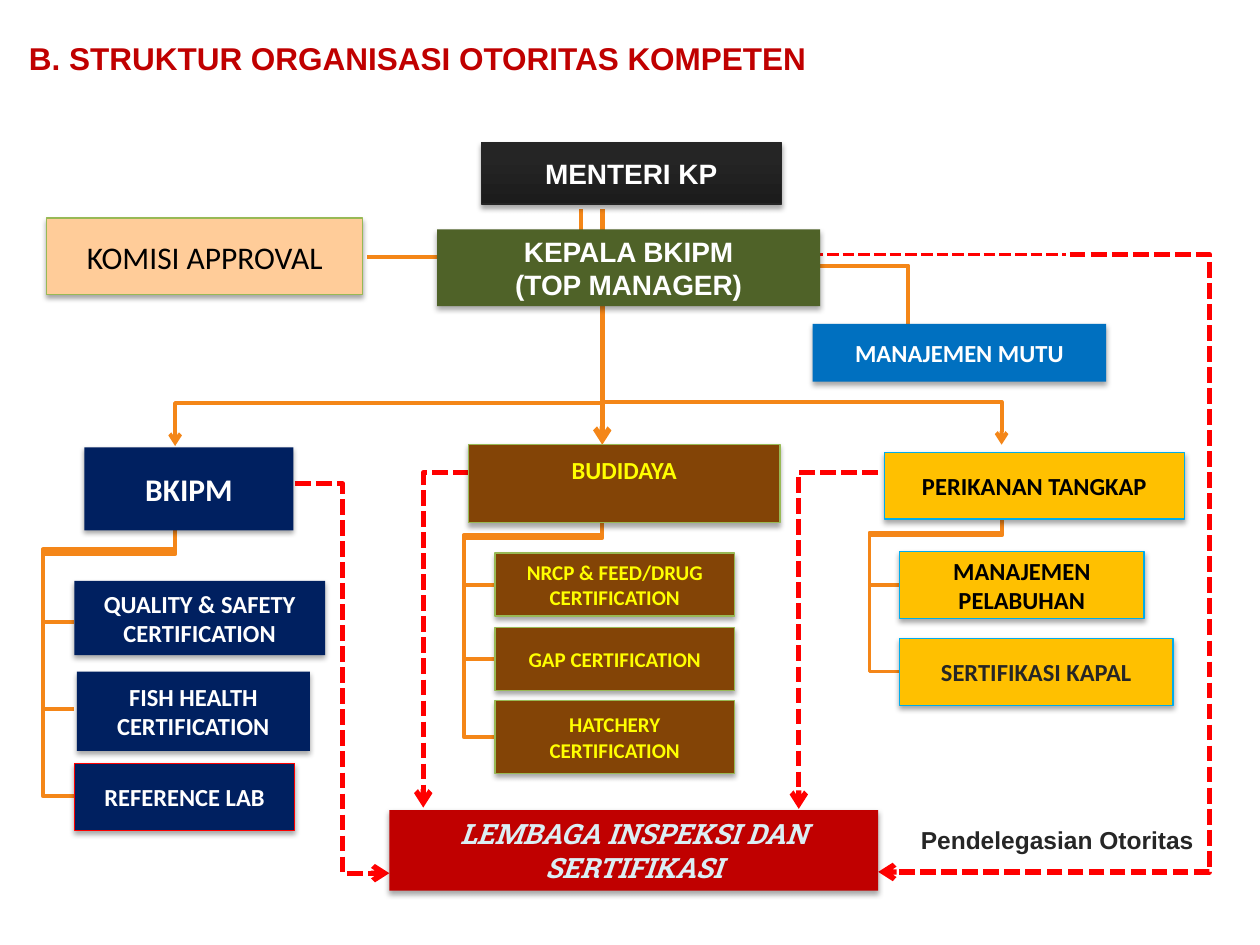
from dataclasses import dataclass
from typing import NamedTuple, Optional

from lxml import etree
from pptx import Presentation
from pptx.dml.color import RGBColor
from pptx.enum import dml, shapes, text
from pptx.oxml import ns
from pptx.util import Inches, Pt


@dataclass(frozen=True)
class Theme:
    red: str = "C00000"
    dash_red: str = "FF0000"
    orange: str = "F48618"
    navy: str = "002060"
    brown: str = "834406"
    olive: str = "4F6228"
    blue: str = "0070C0"
    amber: str = "FFC000"
    peach: str = "FFCC99"
    black: str = "000000"
    charcoal: str = "252525"
    ink: str = "1C1C1C"
    label: str = "262626"
    white: str = "FFFFFF"
    yellow: str = "FFFF00"
    ice: str = "DBEEF4"
    green_edge: str = "98B955"
    cyan_edge: str = "00ACEB"
    sans: str = "Arial"
    body: str = "Calibri"
    slab: str = "Roboto Slab"
    large: int = 18
    medium: int = 16
    normal: int = 14
    small: int = 12


THEME = Theme()


class Style(NamedTuple):
    fill: str
    color: str
    edge: Optional[str] = None
    size: int = THEME.normal
    font: str = THEME.body
    bold: bool = True
    italic: bool = False
    wrap: bool = False


class Box(NamedTuple):
    label: str
    left: float
    top: float
    width: float
    height: float
    style: Style


class Route(NamedTuple):
    """Corner points of a right-angled connector, from begin to end."""
    points: tuple
    color: str = THEME.orange
    weight: float = 2.25
    arrow: bool = False
    dashed: bool = False


class Branch(NamedTuple):
    """Connectors from one unit to the boxes below it, by way of a side rail."""
    trunk: tuple
    rail: float
    box_edge: float
    drops: tuple
    ends: tuple


NAVY = Style(THEME.navy, THEME.white, wrap=True)
BROWN = Style(THEME.brown, THEME.yellow, THEME.green_edge, THEME.small)
AMBER = Style(THEME.amber, THEME.black, THEME.cyan_edge)
HEAD = Style(THEME.olive, THEME.white, None, THEME.medium, THEME.sans)
BUDIDAYA = "BUDIDAYA"

BOXES = [
    Box("MENTERI KP", 3.82, 1.13, 2.38, 0.49,
        HEAD._replace(fill=THEME.charcoal, edge=THEME.charcoal)),
    Box("KEPALA BKIPM\n(TOP MANAGER)", 3.47, 1.82, 3.04, 0.61, HEAD),
    Box("KOMISI APPROVAL", 0.37, 1.73, 2.51, 0.61,
        Style(THEME.peach, THEME.black, THEME.green_edge, THEME.large, bold=False)),
    Box("MANAJEMEN MUTU", 6.45, 2.57, 2.33, 0.46, Style(THEME.blue, THEME.white)),
    Box("BKIPM", 0.67, 3.55, 1.66, 0.66, NAVY._replace(size=THEME.large)),
    Box("QUALITY & SAFETY CERTIFICATION", 0.59, 4.61, 1.99, 0.59, NAVY),
    Box("FISH HEALTH CERTIFICATION", 0.61, 5.33, 1.85, 0.63, NAVY),
    Box("REFERENCE LAB", 0.59, 6.06, 1.75, 0.53, NAVY._replace(edge=THEME.dash_red)),
    Box(BUDIDAYA, 3.72, 3.53, 2.47, 0.62, BROWN._replace(size=THEME.normal)),
    Box("NRCP & FEED/DRUG\nCERTIFICATION", 3.93, 4.39, 1.9, 0.5, BROWN),
    Box("GAP CERTIFICATION", 3.93, 4.98, 1.9, 0.5, BROWN),
    Box("HATCHERY\nCERTIFICATION", 3.93, 5.56, 1.9, 0.58, BROWN),
    Box("PERIKANAN TANGKAP", 7.02, 3.59, 2.38, 0.53, AMBER),
    Box("MANAJEMEN\nPELABUHAN", 7.14, 4.38, 1.94, 0.53, AMBER),
    Box("SERTIFIKASI KAPAL", 7.14, 5.07, 2.17, 0.53, AMBER._replace(color=THEME.label)),
    Box("LEMBAGA INSPEKSI DAN SERTIFIKASI", 3.09, 6.43, 3.88, 0.64,
        Style(THEME.red, THEME.ice, None, THEME.medium, THEME.slab, italic=True, wrap=True)),
]

BRANCHES = [
    Branch((1.39, 4.13), 0.34, 0.59, (4.4, 4.39, 4.36), (4.94, 5.63, 6.32)),
    Branch((4.78, 4.14), 3.68, 3.93, (4.27, 4.25, 4.25), (4.64, 5.23, 5.85)),
    Branch((7.95, 4.13), 6.9, 7.15, (4.25, 4.23), (4.64, 5.33)),
]

TOP = (4.78, 1.66)
COMMAND = [
    Route(((4.61, 1.66), (4.61, 2.04), (5.83, 2.04))),
    Route((TOP, (4.78, 2.04), (2.91, 2.04))),
    Route((TOP, (4.78, 3.2), (1.39, 3.2), (1.39, 3.54)), arrow=True),
    Route((TOP, (4.78, 3.19), (7.95, 3.19), (7.95, 3.53)), arrow=True),
    Route((TOP, (4.78, 3.53)), weight=3, arrow=True),
    Route(((6.16, 2.11), (7.21, 2.11), (7.21, 2.58))),
]
DELEGATION = [
    Route(points, THEME.dash_red, 3, arrow=True, dashed=True) for points in (
        ((8.49, 2.02), (9.6, 2.02), (9.6, 6.92), (6.97, 6.92)),
        ((2.34, 3.84), (2.72, 3.84), (2.72, 6.93), (3.09, 6.93)),
        ((3.72, 3.75), (3.36, 3.75), (3.36, 6.41)),
        ((6.97, 3.75), (6.34, 3.75), (6.34, 6.42)),
    )
] + [Route(((6.19, 2.02), (8.46, 2.02)), THEME.dash_red, dashed=True)]


def rgb(color: str) -> RGBColor:
    return RGBColor.from_string(color)


def add_child(parent, tag: str, **attributes):
    return etree.SubElement(parent, ns.qn(tag), **attributes)


def format_text(frame, style: Style, alignment) -> None:
    for paragraph in frame.paragraphs:
        paragraph.alignment = alignment
        for run in paragraph.runs:
            font = run.font
            font.name, font.size = style.font, Pt(style.size)
            font.bold, font.italic = style.bold, style.italic
            font.color.rgb = rgb(style.color)


def add_soft_shadow(shape) -> None:
    shape.shadow.inherit = False
    effects = shape._element.spPr.find(ns.qn("a:effectLst"))
    shadow = add_child(effects, "a:outerShdw", blurRad=str(Pt(3.1)), dist=str(Pt(1.8)),
                       dir="5400000", rotWithShape="0")
    color = add_child(shadow, "a:srgbClr", val=THEME.black)
    add_child(color, "a:alpha", val="35000")


def draw_box(slide, box: Box):
    style = box.style
    shape = slide.shapes.add_shape(
        shapes.MSO_SHAPE.RECTANGLE, *map(Inches, (box.left, box.top, box.width, box.height)))
    shape.fill.solid()
    shape.fill.fore_color.rgb = rgb(style.fill)
    if style.edge:
        shape.line.color.rgb = rgb(style.edge)
        shape.line.width = Pt(0.75)
    else:
        shape.line.fill.background()
    add_soft_shadow(shape)
    frame = shape.text_frame
    frame.word_wrap = style.wrap
    frame.vertical_anchor = text.MSO_ANCHOR.MIDDLE
    frame.text = box.label
    format_text(frame, style, text.PP_ALIGN.CENTER)
    return shape


def draw_route(slide, route: Route) -> None:
    """Draw a route as one straight or elbow connector with 2 to 4 legs."""
    (x1, y1), (x2, y2) = route.points[0], route.points[-1]
    legs = len(route.points) - 1
    if legs == 1:
        connector = slide.shapes.add_connector(
            shapes.MSO_CONNECTOR.STRAIGHT, *map(Inches, (x1, y1, x2, y2)))
    else:
        vertical = route.points[1][0] == x1
        width, height = abs(x2 - x1), abs(y2 - y1)
        if vertical:
            width, height = height, width
        left, top = (x1 + x2 - width) / 2, (y1 + y2 - height) / 2
        connector = slide.shapes.add_connector(
            shapes.MSO_CONNECTOR.ELBOW, *map(Inches, (left, top, left + width, top + height)))
        transform = connector._element.spPr.find(ns.qn("a:xfrm"))
        mirrored = x2 > x1 if vertical else x2 < x1
        if vertical:
            transform.set("rot", "16200000" if mirrored else "5400000")
        if mirrored:
            transform.set("flipH", "1")
        geometry = connector._element.spPr.find(ns.qn("a:prstGeom"))
        geometry.set("prst", f"bentConnector{legs}")
        across, down = (route.points[1][0] - x1) / (x2 - x1), (route.points[2][1] - y1) / (y2 - y1)
        if vertical:
            across, down = (route.points[1][1] - y1) / (y2 - y1), (route.points[2][0] - x1) / (x2 - x1)
        guides = geometry.find(ns.qn("a:avLst"))
        for number, value in enumerate((across, down)[:legs - 2], 1):
            add_child(guides, "a:gd", name=f"adj{number}", fmla=f"val {round(value * 100000)}")
    line = connector.line
    line.color.rgb = rgb(route.color)
    line.width = Pt(route.weight)
    if route.dashed:
        line.dash_style = dml.MSO_LINE.SQUARE_DOT
    if route.arrow:
        add_child(line._get_or_add_ln(), "a:tailEnd", type="arrow")
    add_child(connector._element.spPr, "a:effectLst")


def draw_branch(slide, branch: Branch) -> None:
    x, y = branch.trunk
    for drop, end in zip(branch.drops, branch.ends):
        draw_route(slide, Route(((x, y), (x, drop), (branch.rail, drop),
                                 (branch.rail, end), (branch.box_edge, end))))


def add_title(slide) -> None:
    title = slide.shapes.title
    title.left, title.top, title.width, title.height = map(Inches, (0.13, 0.29, 9.69, 0.37))
    frame = title.text_frame
    frame.text = "B. STRUKTUR ORGANISASI OTORITAS KOMPETEN"
    frame.vertical_anchor = text.MSO_ANCHOR.MIDDLE
    frame.paragraphs[0].line_spacing = 0.9
    format_text(frame, HEAD._replace(color=THEME.red, size=THEME.large), text.PP_ALIGN.LEFT)


def add_delegation_label(slide) -> None:
    label = slide.shapes.add_textbox(*map(Inches, (7.21, 6.5, 2.73, 0.34)))
    label.text_frame.word_wrap = True
    label.text_frame.text = "Pendelegasian Otoritas"
    format_text(label.text_frame, HEAD._replace(color=THEME.label, size=THEME.normal),
                text.PP_ALIGN.LEFT)


def main() -> None:
    presentation = Presentation()
    presentation.slide_width, presentation.slide_height = Inches(10), Inches(7.5)
    slide = presentation.slides.add_slide(presentation.slide_layouts[5])
    add_title(slide)
    for route in COMMAND + DELEGATION:
        draw_route(slide, route)
    for branch in BRANCHES:
        draw_branch(slide, branch)
    drawn = {box.label: draw_box(slide, box) for box in BOXES}
    fill = drawn["MENTERI KP"].fill
    fill.gradient()
    fill.gradient_angle = 90
    for stop, color, position in zip(fill.gradient_stops, (THEME.ink, THEME.charcoal), (0, 0.8)):
        stop.color.rgb, stop.position = rgb(color), position
    budidaya = drawn[BUDIDAYA].text_frame
    budidaya.vertical_anchor = text.MSO_ANCHOR.TOP
    budidaya.margin_top = Inches(0.08)
    add_delegation_label(slide)
    presentation.save("out.pptx")


if __name__ == "__main__":
    main()
